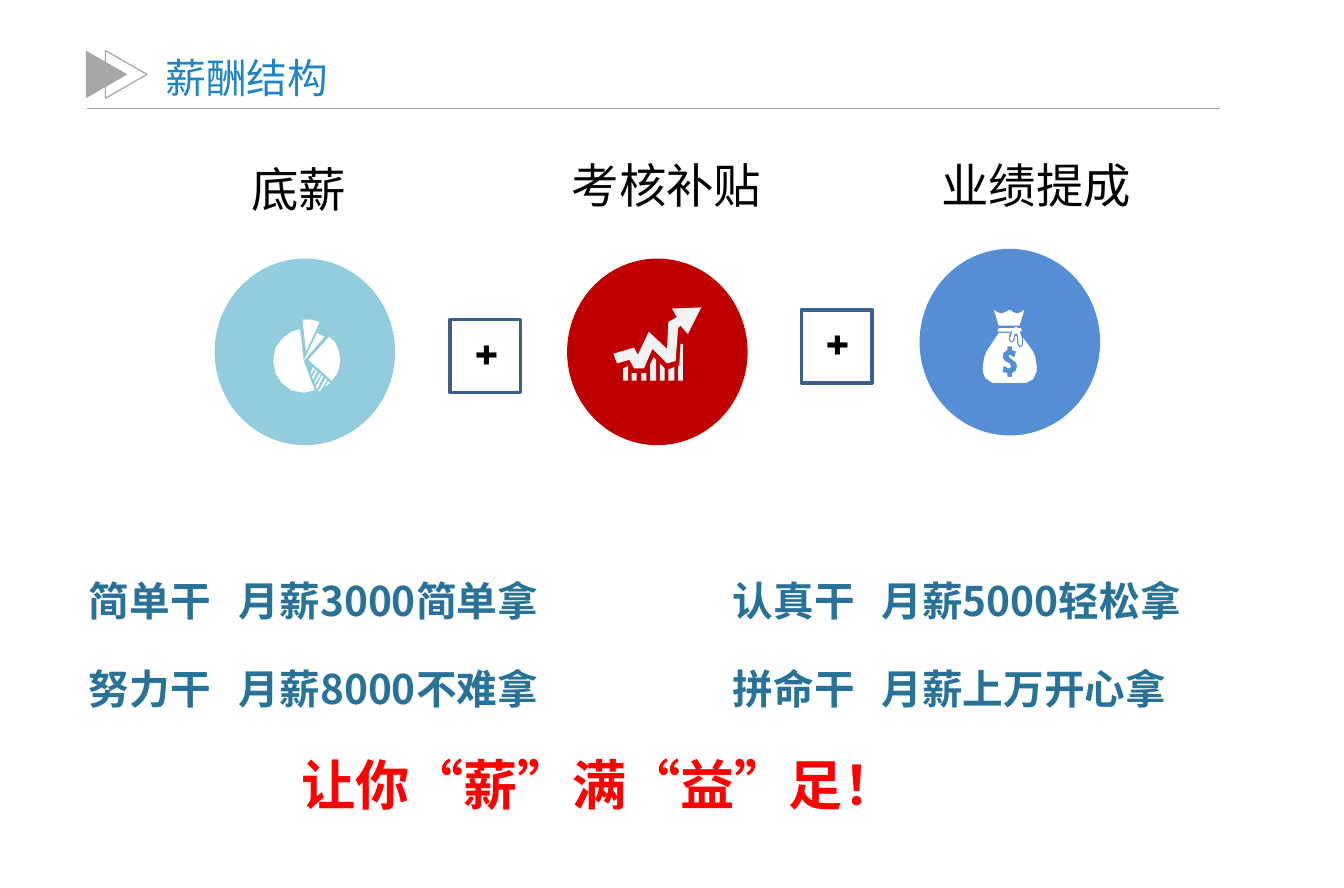
from dataclasses import dataclass

from lxml.etree import SubElement
from pptx import Presentation
from pptx.dml.color import RGBColor
from pptx.enum.shapes import MSO_CONNECTOR as Connector, MSO_SHAPE as Preset
from pptx.enum.text import MSO_ANCHOR as Anchor, PP_ALIGN as Align
from pptx.oxml.ns import qn
from pptx.util import Pt

PX = 9144
CJK = "Noto Sans CJK SC"
LATIN = "Cabin"
GRAY, BLACK, WHITE = "A6A6A6", "000000", "FFFFFF"
TITLE_BLUE, TIER_BLUE, BOX_BLUE, RED = "1D85C5", "297297", "3A5F8C", "FF0000"

Contour = list[tuple[int, int]]


@dataclass
class Style:
    size: int
    color: str
    bold: bool = False
    family: str = CJK


@dataclass
class Label:
    text: str
    left: int
    top: int
    width: int
    height: int
    style: Style
    align: Align = Align.LEFT
    anchor: Anchor = Anchor.TOP


@dataclass
class Component:
    left: int
    top: int
    color: str
    icon_color: str
    icon: list[Contour]


def bar(left: int, right: int, top_left: int, top_right: int) -> Contour:
    return [(left, 312), (right, 312), (right, top_right), (left, top_left)]


PIE = [
    [(270, 276), (275, 281), (278, 288), (279, 295), (278, 302), (276, 307), (272, 312), (253, 295)],
    [(271, 314), (266, 317), (269, 313)],
    [(263, 320), (268, 312), (267, 310), (261, 321)],
    [(260, 319), (265, 309), (264, 308), (259, 317)],
    [(258, 315), (263, 307), (262, 306), (258, 313)],
    [(257, 311), (260, 305), (259, 303), (256, 309)],
    [(255, 307), (258, 302), (257, 301), (255, 305)],
    [(260, 273), (249, 296), (246, 270), (239, 272), (232, 277), (226, 285), (224, 296),
     (226, 306), (231, 314), (239, 320), (249, 322), (258, 320), (249, 296), (266, 276)],
    [(248, 262), (251, 288), (262, 264), (255, 262)],
]
GROWTH = [
    [(575, 252), (564, 274), (558, 267), (556, 269), (554, 296), (547, 298), (535, 286),
     (528, 302), (520, 302), (516, 295), (506, 298), (503, 290), (520, 285), (523, 291),
     (532, 272), (547, 286), (548, 264), (555, 260), (551, 253)],
    bar(511, 515, 302, 300),
    bar(518, 522, 306, 306),
    bar(526, 530, 306, 306),
    [(533, 312), (538, 312), (538, 295), (536, 293), (533, 299)],
    bar(541, 545, 298, 302),
    bar(548, 553, 303, 301),
    [(556, 312), (560, 312), (560, 282), (558, 282), (557, 300), (556, 300)],
]
MONEY_BAG = [
    [(847, 288), (839, 277), (839, 282), (838, 284), (837, 285), (835, 284), (834, 282),
     (834, 277), (833, 275), (832, 277), (832, 279), (830, 281), (828, 280), (827, 278),
     (828, 273), (819, 273), (809, 288), (807, 293), (806, 300), (806, 305), (808, 310),
     (814, 314), (841, 314), (847, 311), (850, 305), (850, 300), (849, 293)],
    [(830, 306), (830, 309), (826, 309), (826, 306), (822, 305), (823, 300), (827, 302),
     (829, 301), (828, 298), (824, 296), (822, 293), (823, 289), (826, 287), (826, 284),
     (830, 284), (830, 287), (833, 288), (832, 293), (828, 291), (827, 292), (829, 294),
     (833, 297), (834, 300), (833, 304)],
    [(819, 267), (815, 254), (818, 256), (821, 257), (824, 256), (828, 254), (831, 256),
     (834, 257), (837, 256), (840, 254), (836, 267)],
    [(837, 272), (836, 272), (838, 277), (838, 282), (837, 284), (835, 282), (835, 277),
     (834, 273), (833, 274), (832, 273), (831, 278), (830, 280), (828, 278), (830, 272),
     (819, 272), (818, 271), (819, 269), (831, 269), (833, 268), (835, 269), (837, 269),
     (838, 271)],
]

COMPONENT_LEFTS = [176 + 289 * column for column in range(3)]
COMPONENTS = [
    Component(COMPONENT_LEFTS[0], 212, "93CDDD", WHITE, PIE),
    Component(COMPONENT_LEFTS[1], 212, "C00000", "F2F2F2", GROWTH),
    Component(COMPONENT_LEFTS[2], 204, "558ED5", WHITE, MONEY_BAG),
]
HEADING = Style(28, BLACK)
LABELS = [
    Label("薪酬结构", 126, 39, 536, 48, Style(24, TITLE_BLUE), anchor=Anchor.MIDDLE),
    Label("底薪", 196, 126, 135, 57, HEADING),
    Label("考核补贴", 426, 123, 241, 57, HEADING, Align.CENTER),
    Label("业绩提成", 739, 123, 221, 57, HEADING, Align.CENTER),
]
PLUS_BOXES = [(369, 262), (657, 254)]
PLUS = Style(32, BLACK, True, LATIN)
TIERS = [
    "简单干\t月薪3000简单拿\t认真干\t月薪5000轻松拿",
    "努力干\t月薪8000不难拿\t拼命干\t月薪上万开心拿",
]
TIER_TABS = [123, 528, 650]
SLOGAN = "让你“薪”满“益”足！"
SLOGAN_INDENT = 174


def rgb(value: str) -> RGBColor:
    return RGBColor.from_string(value)


def paint(shape, fill: str | None = None, line: str | None = None, weight: float = 0.75) -> None:
    shape.shadow.inherit = False
    if fill:
        shape.fill.solid()
        shape.fill.fore_color.rgb = rgb(fill)
    else:
        shape.fill.background()
    if line:
        shape.line.color.rgb = rgb(line)
        shape.line.width = Pt(weight)
    else:
        shape.line.fill.background()


def add_preset(slide, preset: Preset, left: int, top: int, width: int, height: int):
    return slide.shapes.add_shape(preset, left * PX, top * PX, width * PX, height * PX)


def set_font(paragraph, style: Style) -> None:
    font = paragraph.font
    font.size = Pt(style.size)
    font.bold = style.bold
    font.color.rgb = rgb(style.color)
    font.name = style.family
    properties = paragraph._p.pPr.find(qn("a:defRPr"))
    SubElement(properties, qn("a:ea")).set("typeface", style.family)


def add_text_frame(slide, left: int, top: int, width: int, height: int):
    frame = slide.shapes.add_textbox(left * PX, top * PX, width * PX, height * PX).text_frame
    frame.word_wrap = True
    return frame


def add_label(slide, label: Label) -> None:
    frame = add_text_frame(slide, label.left, label.top, label.width, label.height)
    frame.vertical_anchor = label.anchor
    paragraph = frame.paragraphs[0]
    paragraph.text = label.text
    paragraph.alignment = label.align
    set_font(paragraph, label.style)


def add_header(slide) -> None:
    for left, fill, line in [(84, None, GRAY), (68, GRAY, None)]:
        triangle = add_preset(slide, Preset.ISOSCELES_TRIANGLE, left, 44, 39, 34)
        triangle.rotation = 90
        paint(triangle, fill, line)
    rule = slide.shapes.add_connector(Connector.STRAIGHT, 71 * PX, 89 * PX, 1000 * PX, 89 * PX)
    rule.line.color.rgb = rgb(GRAY)
    rule.line.width = Pt(0.75)
    SubElement(rule._element.spPr, qn("a:effectLst"))


def add_component(slide, component: Component) -> None:
    disc = add_preset(slide, Preset.OVAL, component.left, component.top, 148, 153)
    paint(disc, component.color)
    first, *others = component.icon
    builder = slide.shapes.build_freeform(*first[0], scale=PX)
    builder.add_line_segments(first[1:], close=True)
    for contour in others:
        builder.move_to(*contour[0])
        builder.add_line_segments(contour[1:], close=True)
    paint(builder.convert_to_shape(), component.icon_color)


def add_plus(slide, left: int, top: int) -> None:
    paint(add_preset(slide, Preset.RECTANGLE, left, top, 58, 60), line=BOX_BLUE, weight=2)
    add_label(slide, Label("+", left + 10, top - 8, 39, 64, PLUS, Align.CENTER))


def add_tiers(slide) -> None:
    frame = add_text_frame(slide, 63, 467, 976, 226)
    for index, text in enumerate([*TIERS, SLOGAN]):
        paragraph = frame.add_paragraph() if index else frame.paragraphs[0]
        paragraph.text = text
        if index:
            paragraph.space_before = Pt(23)
        properties = paragraph._p.get_or_add_pPr()
        if text == SLOGAN:
            properties.set("marL", str(SLOGAN_INDENT * PX))
            set_font(paragraph, Style(32, RED, True))
        else:
            tabs = SubElement(properties, qn("a:tabLst"))
            for position in TIER_TABS:
                SubElement(tabs, qn("a:tab"), pos=str(position * PX), algn="l")
            set_font(paragraph, Style(24, TIER_BLUE, True))


def main() -> None:
    deck = Presentation()
    deck.slide_width, deck.slide_height = 1102 * PX, 728 * PX
    slide = deck.slides.add_slide(deck.slide_layouts[6])
    add_header(slide)
    for component in COMPONENTS:
        add_component(slide, component)
    for left, top in PLUS_BOXES:
        add_plus(slide, left, top)
    for label in LABELS:
        add_label(slide, label)
    add_tiers(slide)
    deck.save("out.pptx")


if __name__ == "__main__":
    main()
